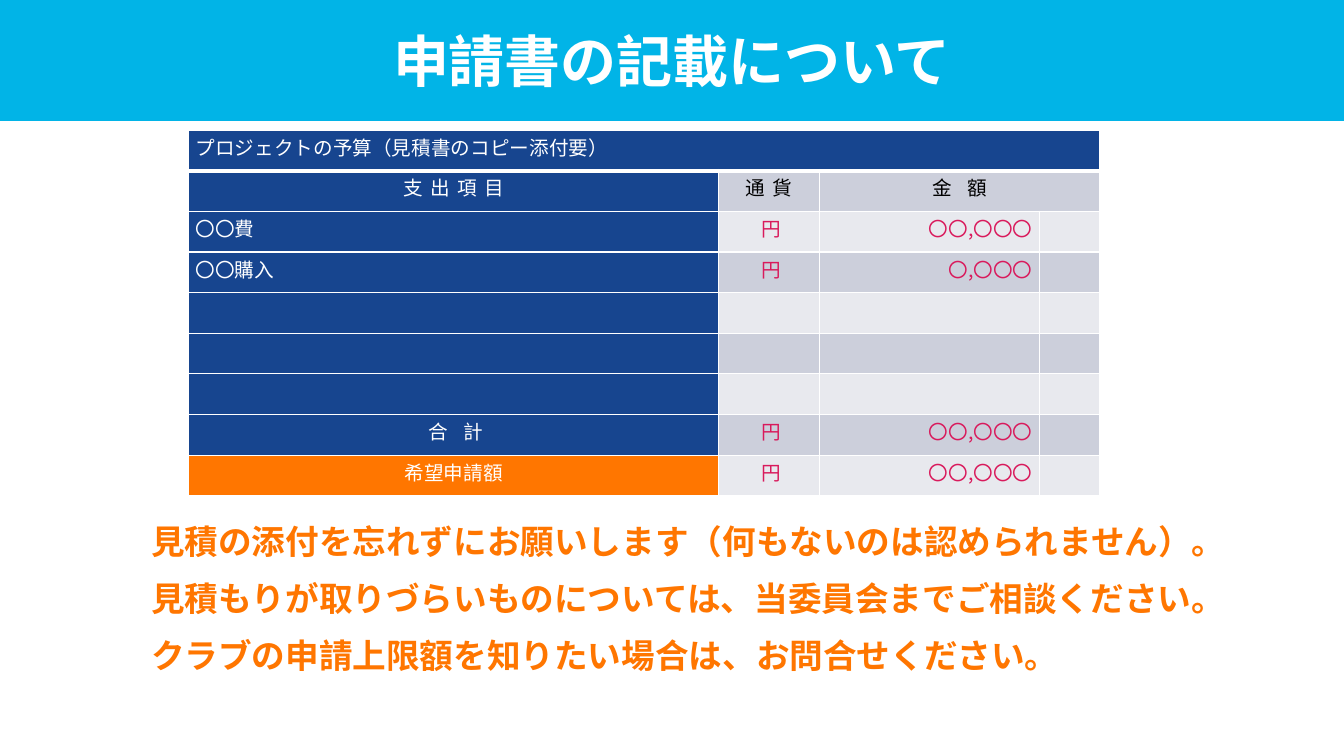
"""Build the slide on filling in the budget part of an application form."""
from dataclasses import dataclass

from lxml import etree
from pptx import Presentation
from pptx.dml.color import RGBColor
from pptx.enum.shapes import MSO_SHAPE as Shape
from pptx.enum.text import MSO_ANCHOR as Anchor, MSO_AUTO_SIZE as AutoSize, PP_ALIGN as Align
from pptx.oxml.ns import qn
from pptx.util import Inches, Pt

FONT = "Noto Sans CJK JP"
SKY, NAVY, ORANGE, PINK = "01B4E7", "17458F", "FF7600", "D91A5C"
WHITE, BLACK, GRAY, PALE = "FFFFFF", "000000", "CCCFDB", "E8E9EE"
COLUMN_WIDTHS = (5.26, 1, 2.18, 0.6)
ROW_HEIGHT = 3.63 / 9


@dataclass(frozen=True)
class TextRun:
    text: str
    color: str
    size: float = 14
    bold: bool = False
    spacing: float = 0


@dataclass(frozen=True)
class CellText:
    runs: tuple[TextRun, ...] = ()
    align: Align = Align.CENTER


@dataclass(frozen=True)
class BudgetRow:
    cells: tuple[CellText, ...]
    label_fill: str = NAVY


def rgb(color: str) -> RGBColor:
    return RGBColor.from_string(color)


def paint(target, color: str) -> None:
    target.fill.solid()
    target.fill.fore_color.rgb = rgb(color)


def add_run(paragraph, item: TextRun) -> None:
    run = paragraph.add_run()
    run.text = item.text
    run.font.size = Pt(item.size)
    run.font.bold = item.bold
    run.font.color.rgb = rgb(item.color)
    run.font.name = FONT
    properties = run.font._element
    etree.SubElement(properties, qn("a:ea")).set("typeface", FONT)
    if item.spacing:
        properties.set("spc", str(round(item.spacing * 100)))


def set_borders(cell, top: float, bottom: float) -> None:
    properties = cell._tc.get_or_add_tcPr()
    widths = {"a:lnL": 1, "a:lnR": 1, "a:lnT": top, "a:lnB": bottom}
    for position, (tag, width) in enumerate(widths.items()):
        line = etree.Element(qn(tag), w=str(Pt(width)))
        fill = etree.SubElement(line, qn("a:solidFill"))
        etree.SubElement(fill, qn("a:srgbClr"), val=WHITE)
        properties.insert(position, line)


def fill_cell(cell, content: CellText, color: str) -> None:
    paint(cell, color)
    cell.vertical_anchor = Anchor.MIDDLE
    cell.margin_left = cell.margin_right = Inches(0.07)
    cell.margin_top = cell.margin_bottom = 0
    paragraph = cell.text_frame.paragraphs[0]
    paragraph.alignment = content.align
    paragraph.line_spacing = Pt(15)
    for item in content.runs:
        add_run(paragraph, item)


def label(text: str, align: Align = Align.JUSTIFY, spacing: float = 0) -> CellText:
    return CellText((TextRun(text, WHITE, spacing=spacing),), align)


def heading(text: str, spacing: float) -> CellText:
    return CellText((TextRun(text, BLACK, spacing=spacing),))


def amount_row(name: CellText, amount: str, fill: str = NAVY) -> BudgetRow:
    currency = CellText((TextRun(" 円", PINK),))
    value = CellText((TextRun(amount, PINK),), Align.RIGHT)
    return BudgetRow((name, currency, value, CellText()), fill)


def add_banner(slide, title: str) -> None:
    banner = slide.shapes.add_shape(Shape.RECTANGLE, 0, 0, Inches(13.33), Inches(1.2))
    banner.shadow.inherit = False
    paint(banner, SKY)
    banner.line.fill.background()
    banner.text_frame.vertical_anchor = Anchor.MIDDLE
    paragraph = banner.text_frame.paragraphs[0]
    paragraph.alignment = Align.CENTER
    add_run(paragraph, TextRun(title, WHITE, 40, True))


def add_budget(slide, rows: list[BudgetRow]) -> None:
    table = slide.shapes.add_table(
        len(rows), len(COLUMN_WIDTHS), Inches(1.87), Inches(1.29),
        Inches(sum(COLUMN_WIDTHS)), Inches(ROW_HEIGHT * len(rows))).table
    for column, width in zip(table.columns, COLUMN_WIDTHS):
        column.width = Inches(width)
    for row_index, row in enumerate(rows):
        table.rows[row_index].height = Inches(ROW_HEIGHT)
        band = GRAY if row_index % 2 else PALE
        for column_index, content in enumerate(row.cells):
            cell = table.cell(row_index, column_index)
            is_label = column_index == 0 or row_index == 0
            fill_cell(cell, content, row.label_fill if is_label else band)
            set_borders(cell, 3 if row_index == 1 else 1, 3 if row_index == 0 else 1)
    table.cell(0, 0).merge(table.cell(0, 3))
    table.cell(1, 2).merge(table.cell(1, 3))


def add_notices(slide, notices: list[str]) -> None:
    box = slide.shapes.add_textbox(Inches(1.4), Inches(5.12), Inches(10.65), Inches(1.65))
    frame = box.text_frame
    frame.word_wrap = True
    frame.auto_size = AutoSize.SHAPE_TO_FIT_TEXT
    for index, notice in enumerate(notices):
        paragraph = frame.add_paragraph() if index else frame.paragraphs[0]
        paragraph.space_before = paragraph.space_after = Pt(6)
        add_run(paragraph, TextRun(notice, ORANGE, 24, True))


def main() -> None:
    presentation = Presentation()
    presentation.slide_width, presentation.slide_height = Inches(13.33), Inches(7.5)
    slide = presentation.slides.add_slide(presentation.slide_layouts[6])
    empty = CellText()
    total = CellText((TextRun(" ", WHITE), TextRun("合計", WHITE, spacing=10.5)))
    add_banner(slide, "申請書の記載について")
    add_budget(slide, [
        BudgetRow((label("プロジェクトの予算（見積書のコピー添付要）"), empty, empty, empty)),
        BudgetRow((label("支出項目", Align.CENTER, 5.2), heading("通貨", 5.2),
                   heading("金額", 10.5), empty)),
        amount_row(label("〇〇費"), "〇〇,〇〇〇"),
        amount_row(label("〇〇購入"), "〇,〇〇〇"),
        *[BudgetRow((empty,) * 4)] * 3,
        amount_row(total, "〇〇,〇〇〇"),
        amount_row(label("希望申請額", Align.CENTER), "〇〇,〇〇〇", ORANGE),
    ])
    add_notices(slide, [
        "見積の添付を忘れずにお願いします（何もないのは認められません）。",
        "見積もりが取りづらいものについては、当委員会までご相談ください。",
        "クラブの申請上限額を知りたい場合は、お問合せください。",
    ])
    presentation.save("out.pptx")


if __name__ == "__main__":
    main()
